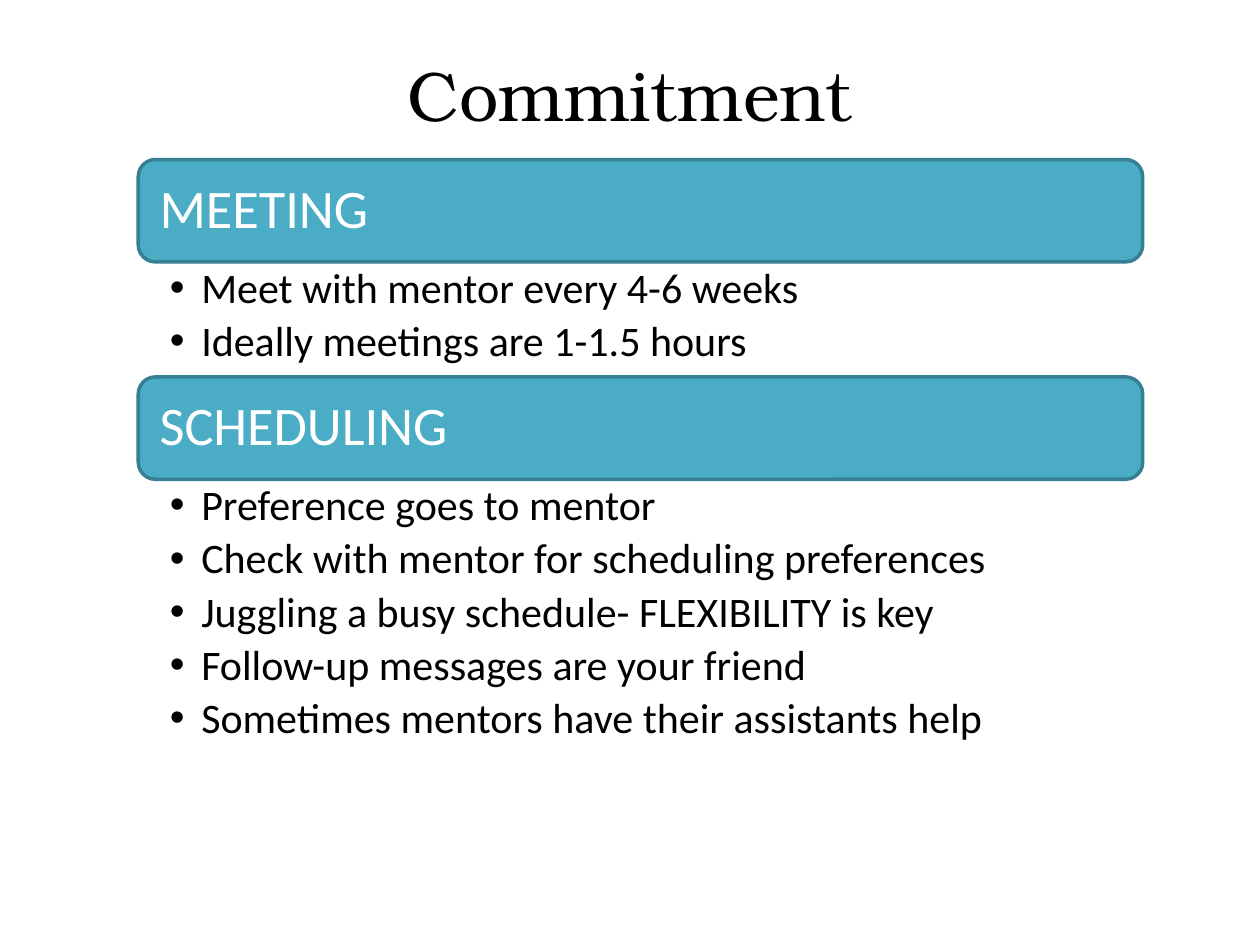
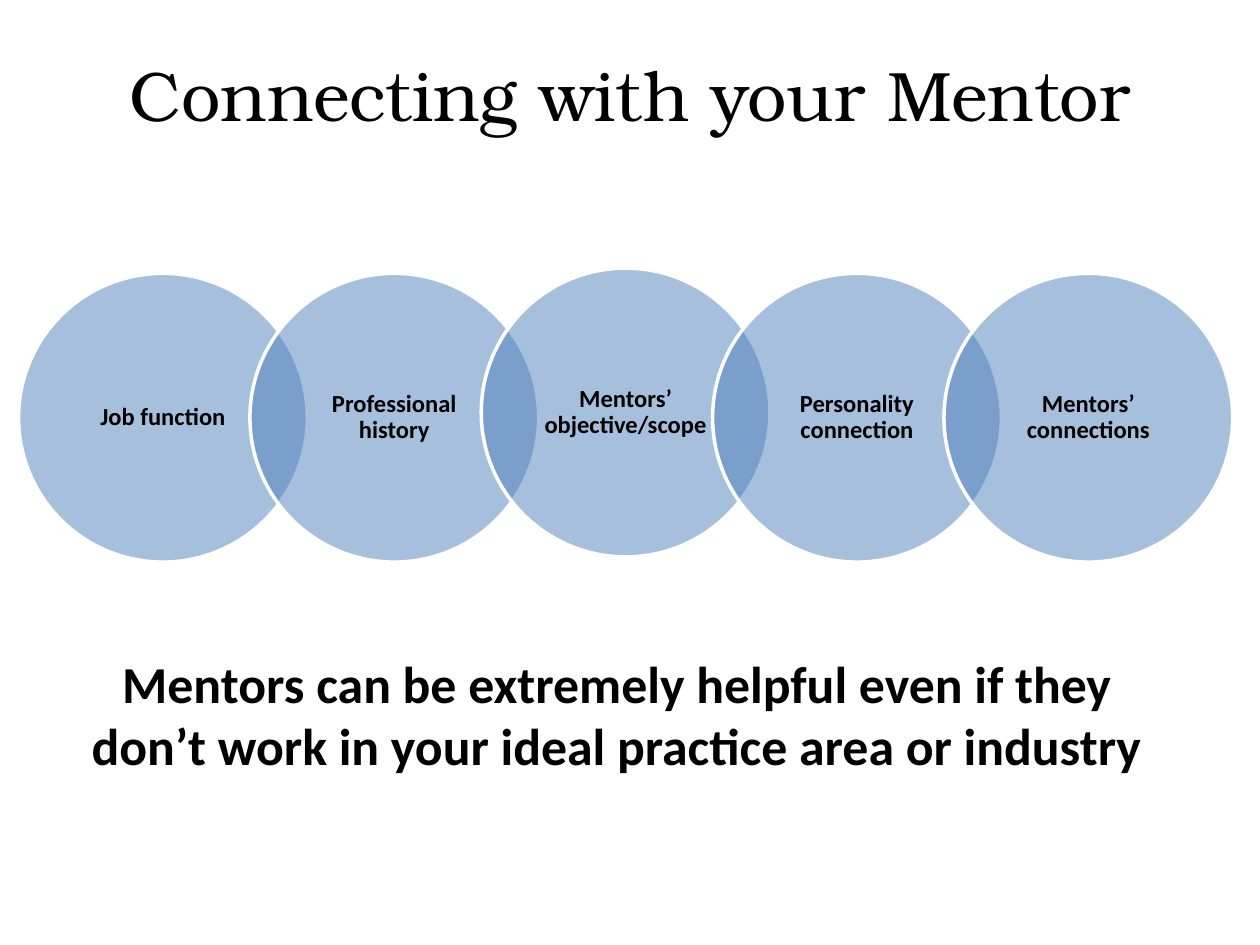
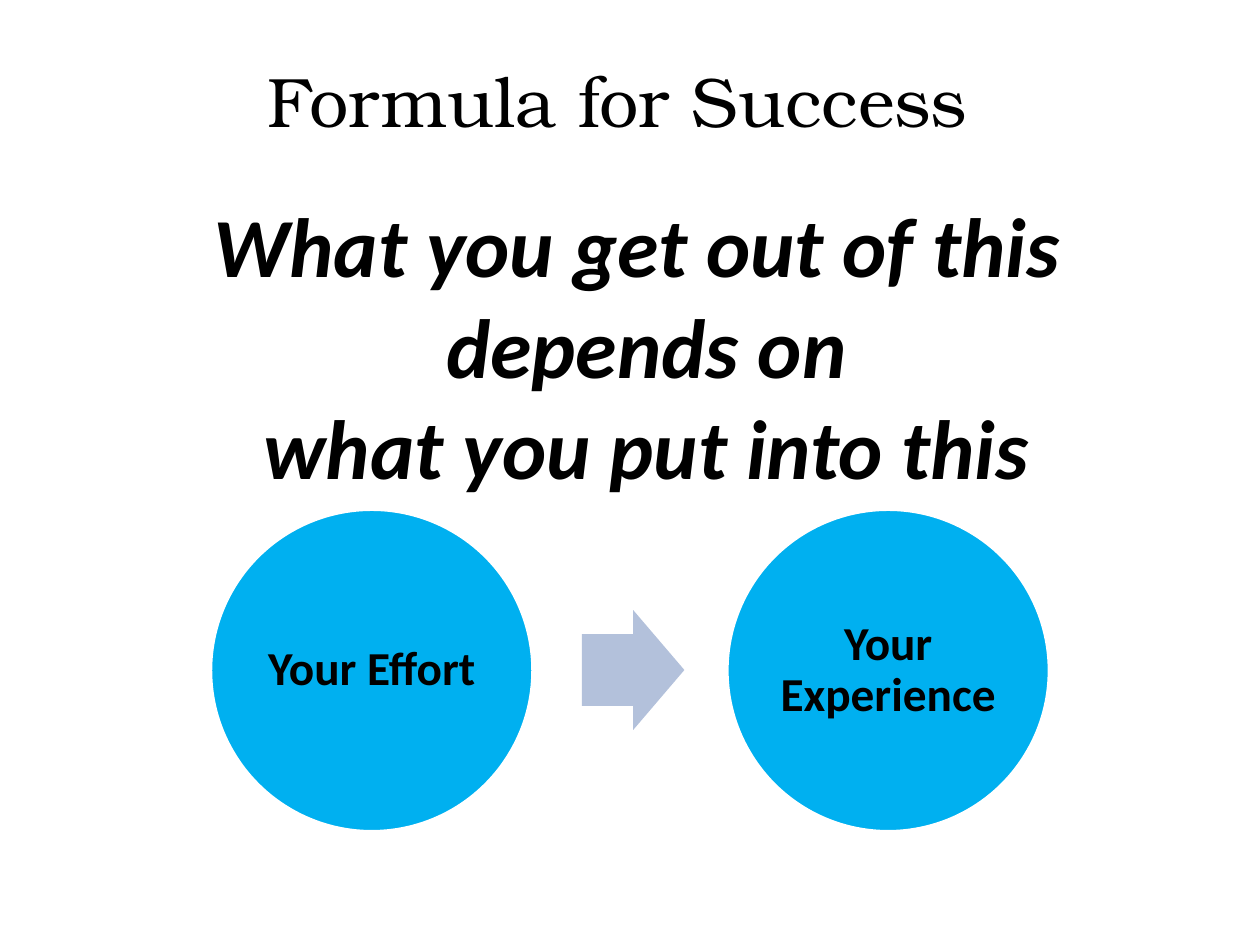
from lxml.etree import SubElement
from pptx import Presentation
from pptx.dml.color import RGBColor
from pptx.enum.shapes import MSO_SHAPE
from pptx.enum.text import MSO_ANCHOR, PP_ALIGN
from pptx.oxml.ns import qn
from pptx.util import Pt

BLACK, WHITE = "000000", "FFFFFF"
TEAL, DARK_TEAL = "4BACC6", "377F92"
BLUE, SKY, PALE_BLUE = "4F81BD", "00B0F0", "B3C1DB"
TITLE = {"name": "TeX Gyre Bonum", "size": Pt(40)}
HEADING = {"name": "Calibri", "size": Pt(31)}
BULLET = {"name": "Calibri", "size": Pt(24)}
STATEMENT = {"name": "Calibri", "size": Pt(29.6), "bold": True}
MOTTO = {"name": "Calibri", "size": Pt(48), "bold": True, "italic": True}
LINK = {"name": "Calibri", "size": Pt(14), "bold": True}
FACTOR = {"name": "Calibri", "size": Pt(27), "bold": True}


def rgb(value):
    return RGBColor.from_string(value)


def add(s, box, lines=(), font=None, color=BLACK, kind=None, fill=None, line=None,
        insets=(7.2, 3.6, 7.2, 3.6), anchor=MSO_ANCHOR.MIDDLE,
        align=PP_ALIGN.CENTER, spacing=None):
    box = [Pt(v) for v in box]
    if kind is None:
        sp = s.shapes.add_textbox(*box)
    else:
        sp = s.shapes.add_shape(kind, *box)
        sp.shadow.inherit = False
        sp.fill.solid()
        sp.fill.fore_color.rgb = rgb(fill)
        if line:
            sp.line.color.rgb = rgb(line)
            sp.line.width = Pt(2)
        else:
            sp.line.fill.background()
    tf = sp.text_frame
    tf.word_wrap = True
    tf.vertical_anchor = anchor
    for side, inset in zip(("left", "top", "right", "bottom"), insets):
        setattr(tf, f"margin_{side}", Pt(inset))
    for i, text in enumerate(lines):
        p = tf.add_paragraph() if i else tf.paragraphs[0]
        p.text = text
        p.alignment = align
        p.line_spacing = spacing
        for r in p.runs:
            for key, value in font.items():
                setattr(r.font, key, value)
            r.font.color.rgb = rgb(color)
    return sp


prs = Presentation()
prs.slide_width, prs.slide_height = Pt(720), Pt(540)

titles = [
    ("Commitment", (36, 8.64, 648, 90), 7.2),
    ("Connecting with your Mentor", (36, 8.64, 648, 90), 7.2),
    ("Formula for Success", (48.24, 18, 642.24, 77.76), 40),
]
slides = []
for text, box, right in titles:
    s = prs.slides.add_slide(prs.slide_layouts[6])
    add(s, box, [text], TITLE, insets=(7.2, 3.6, right, 3.6))
    slides.append(s)
commitment, connecting, formula = slides

sections = [
    ("MEETING", 91.2, 65.5, [
        "Meet with mentor every 4-6 weeks",
        "Ideally meetings are 1-1.5 hours",
    ]),
    ("SCHEDULING", 215.4, 197.3, [
        "Preference goes to mentor",
        "Check with mentor for scheduling preferences",
        "Juggling a busy schedule- FLEXIBILITY is key",
        "Follow-up messages are your friend",
        "Sometimes mentors have their assistants help",
    ]),
]
left, width, bar = 79, 574, 58.5
for heading, top, height, points in sections:
    add(commitment, (left, top, width, bar), [heading], HEADING, WHITE,
        MSO_SHAPE.ROUNDED_RECTANGLE, TEAL, DARK_TEAL, insets=(9.4,) * 4,
        align=PP_ALIGN.LEFT, spacing=0.9)
    sp = add(commitment, (left, top + bar, width, height), points, BULLET,
             insets=(18, 2.9, 17.3, 2.9), anchor=MSO_ANCHOR.TOP,
             align=PP_ALIGN.LEFT, spacing=0.9)
    for p in sp.text_frame.paragraphs:
        p.space_after = Pt(4.5)
        pPr = p._p.get_or_add_pPr()
        pPr.set("marL", str(Pt(18)))
        pPr.set("indent", str(-Pt(18)))
        SubElement(pPr, qn("a:buFont"), typeface="Arial")
        SubElement(pPr, qn("a:buChar"), char="•")

add(connecting, (28.8, 368.64, 648, 75.6),
    ["Mentors can be extremely helpful even if they don’t work in your ideal "
     "practice area or industry"], STATEMENT, anchor=MSO_ANCHOR.TOP)
links = [
    ("Job function", 156.2),
    ("Professional history", 156.2),
    ("Mentors’ objective/scope", 153.2),
    ("Personality connection", 156.2),
    ("Mentors’ connections", 156.2),
]
for i, (text, top) in enumerate(links):
    sp = add(connecting, (10.6 + i * 132.2, top, 165, 165), [text], LINK,
             kind=MSO_SHAPE.OVAL, fill=BLUE, line=WHITE,
             insets=(9.1, 1.4, 9.1, 1.4), spacing=0.9)
    color = sp.fill._xPr.find(qn("a:solidFill"))[0]
    SubElement(color, qn("a:alpha"), val="50000")

add(formula, (48.24, 103.68, 642.24, 187.2),
    ["What you get out of this \vdepends on\vwhat you put into this"], MOTTO)
for text, left in (("Your Effort", 120.3), ("Your Experience", 415.4)):
    add(formula, (left, 291, 184.3, 184.3), [text], FACTOR, kind=MSO_SHAPE.OVAL,
        fill=SKY, line=WHITE, insets=(2.9,) * 4, spacing=0.9)
sp = add(formula, (332.6, 348.6, 58.5, 68.5), kind=MSO_SHAPE.RIGHT_ARROW, fill=PALE_BLUE)
sp.adjustments[0], sp.adjustments[1] = 0.6, 0.5

prs.save("out.pptx")
